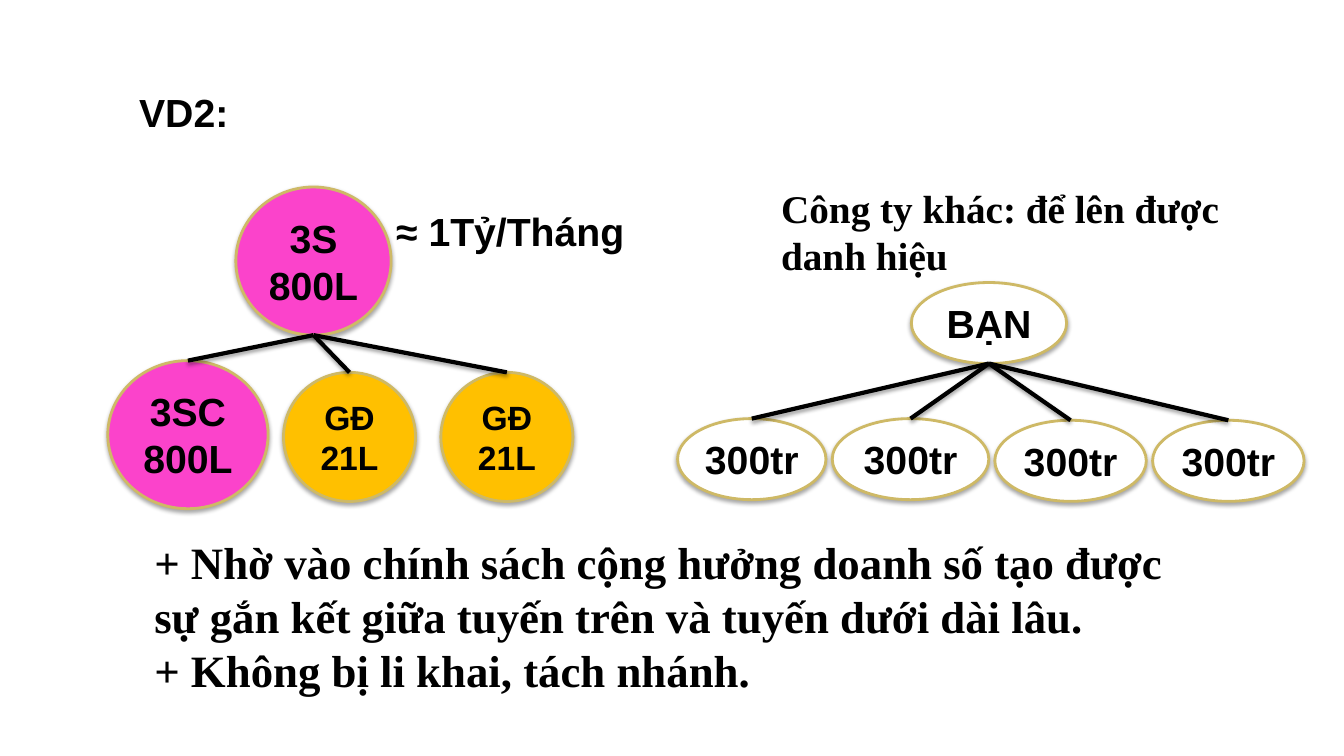
from lxml.etree import SubElement
from pptx import Presentation
from pptx.dml.color import RGBColor
from pptx.enum.shapes import MSO_CONNECTOR, MSO_SHAPE
from pptx.enum.text import MSO_ANCHOR, PP_ALIGN
from pptx.oxml.ns import qn
from pptx.util import Pt

COLORS = {"black": "000000", "gold": "CEB966", "pink": "FB43CB",
          "amber": "FFC000", "white": "FFFFFF"}


def write_text(shape, lines, size, font, align, wrap):
    frame = shape.text_frame
    frame.word_wrap = wrap
    frame.margin_left = frame.margin_right = Pt(3.6)
    frame.margin_top = frame.margin_bottom = Pt(3.6)
    for index, line in enumerate(lines):
        paragraph = frame.add_paragraph() if index else frame.paragraphs[0]
        paragraph.alignment = align
        run = paragraph.add_run()
        run.text = line
        run.font.size = Pt(size)
        run.font.name = font
        run.font.bold = True
        run.font.color.rgb = RGBColor.from_string(COLORS["black"])


def add_shadow(shape, distance, opacity):
    properties = shape._element.spPr
    effects = properties.find(qn("a:effectLst"))
    if effects is None:
        effects = SubElement(properties, qn("a:effectLst"))
    shadow = SubElement(effects, qn("a:outerShdw"), blurRad=str(Pt(3)),
                        dist=str(Pt(distance)), dir="5400000", rotWithShape="0")
    color = SubElement(shadow, qn("a:srgbClr"), val=COLORS["black"])
    SubElement(color, qn("a:alpha"), val=str(opacity * 1000))


presentation = Presentation()
presentation.slide_width = Pt(960)
presentation.slide_height = Pt(540)
slide = presentation.slides.add_slide(presentation.slide_layouts[6])

trees = [
    [(168.5, 133.6, 110.9, 105.8, "pink", 28, ["3S", "800L"]),
     (77, 257.6, 114.5, 105.8, "pink", 28, ["3SC", "800L"]),
     (202.5, 266, 94.3, 92.2, "amber", 24, ["GĐ", "21L"]),
     (314.9, 266, 94.3, 92.2, "amber", 24, ["GĐ", "21L"])],
    [(651, 201.8, 110.9, 57.9, "white", 28, ["BẠN"]),
     (484, 299, 106, 57.9, "white", 28, ["300tr"]),
     (594.5, 299, 111.8, 57.9, "white", 28, ["300tr"]),
     (710.6, 300.2, 108.2, 57.9, "white", 28, ["300tr"]),
     (823.3, 300.2, 108.2, 57.9, "white", 28, ["300tr"])],
]

for tree in trees:
    root_left, root_top, root_width, root_height = tree[0][:4]
    for level, (left, top, width, height, fill, size, lines) in enumerate(tree):
        node = slide.shapes.add_shape(
            MSO_SHAPE.OVAL, Pt(left), Pt(top), Pt(width), Pt(height))
        node.fill.solid()
        node.fill.fore_color.rgb = RGBColor.from_string(COLORS[fill])
        node.line.color.rgb = RGBColor.from_string(COLORS["gold"])
        node.line.width = Pt(2)
        node.shadow.inherit = False
        add_shadow(node, 1.8, 35)
        node.text_frame.vertical_anchor = MSO_ANCHOR.MIDDLE
        write_text(node, lines, size, "Arial", PP_ALIGN.CENTER, False)
        if level:
            branch = slide.shapes.add_connector(
                MSO_CONNECTOR.STRAIGHT,
                Pt(root_left + root_width / 2), Pt(root_top + root_height),
                Pt(left + width / 2), Pt(top))
            branch.line.color.rgb = RGBColor.from_string(COLORS["black"])
            branch.line.width = Pt(3)
            add_shadow(branch, 1.6, 38)

labels = [
    (95.8, 59.8, 72, 41, 28, "Arial", False, ["VD2:"]),
    (279.4, 144.7, 172, 41, 28, "Arial", False, ["≈ 1Tỷ/Tháng"]),
    (554.4, 128.2, 377.3, 74.9, 28, "Times New Roman", True,
     ["Công ty khác: để lên được danh hiệu"]),
    (106.6, 378.7, 762.5, 123.1, 32, "Times New Roman", True,
     ["+ Nhờ vào chính sách cộng hưởng doanh số tạo được sự gắn kết "
      "giữa tuyến trên và tuyến dưới dài lâu.",
      "+ Không bị li khai, tách nhánh."]),
]

for left, top, width, height, size, font, wrap, lines in labels:
    label = slide.shapes.add_textbox(Pt(left), Pt(top), Pt(width), Pt(height))
    write_text(label, lines, size, font, PP_ALIGN.LEFT, wrap)

presentation.save("out.pptx")
